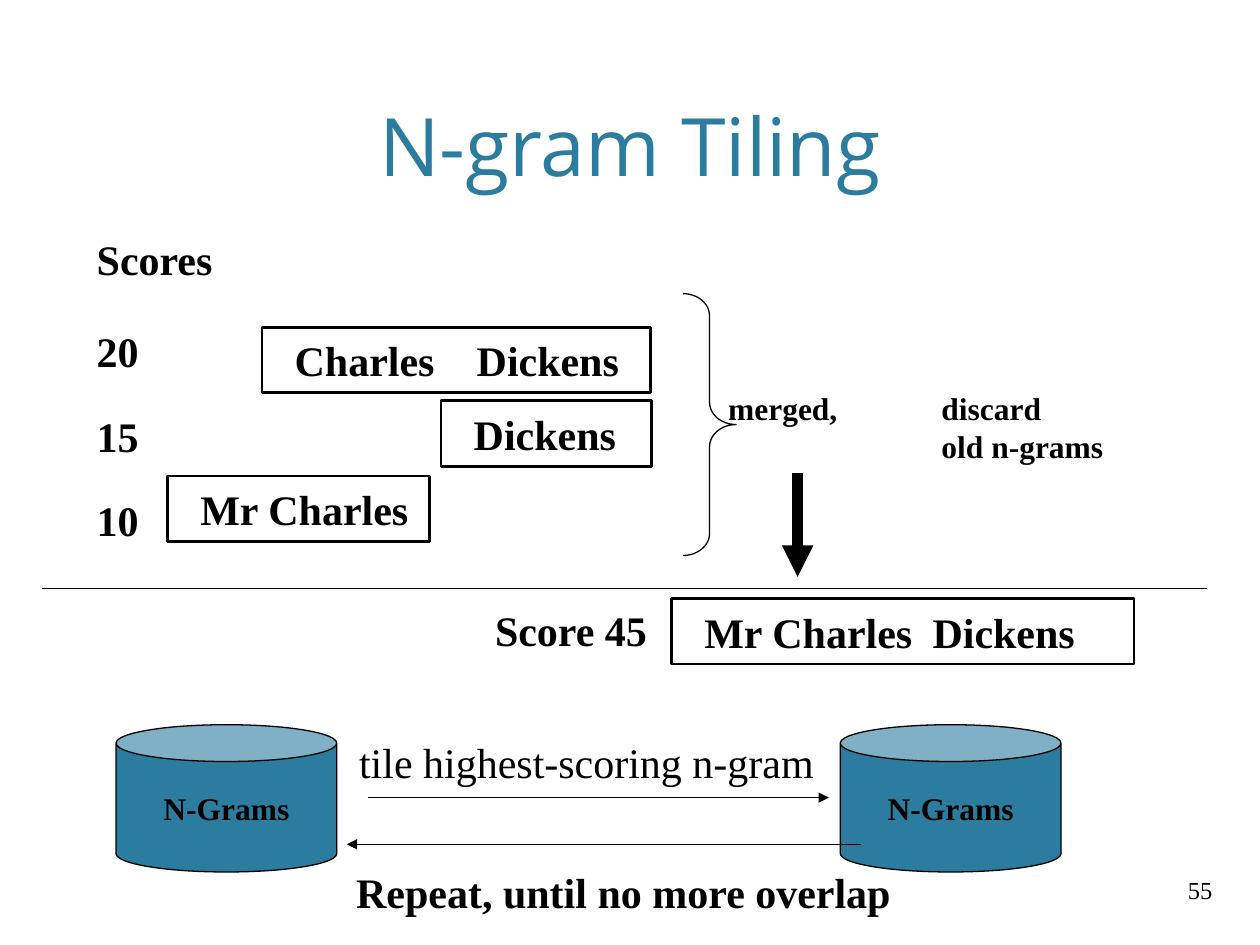
from dataclasses import dataclass
from typing import Optional

import pptx
import pptx.dml.color
import pptx.enum.shapes
import pptx.enum.text
import pptx.oxml
import pptx.oxml.ns
import pptx.util

Cm, Pt = pptx.util.Cm, pptx.util.Pt
SHAPE = pptx.enum.shapes.MSO_SHAPE
ALIGN = pptx.enum.text.PP_ALIGN
ANCHOR = pptx.enum.text.MSO_ANCHOR


@dataclass(frozen=True)
class Theme:
    teal: str = "2C7C9F"
    black: str = "000000"
    title_font: str = "Open Sans"
    body_font: str = "Times New Roman"
    title: float = 46
    body: float = 24
    label: float = 18
    number: float = 14
    thin: float = 0.75
    border: float = 1.5
    thick: float = 6


THEME = Theme()


@dataclass(frozen=True)
class Box:
    """A position and size in centimetres."""
    left: float
    top: float
    width: float
    height: float

    def lengths(self) -> tuple:
        return tuple(Cm(v) for v in (self.left, self.top, self.width, self.height))


@dataclass(frozen=True)
class Text:
    """Lines of text with one format; tab is a tab stop in centimetres."""
    lines: tuple
    size: float = THEME.body
    bold: bool = True
    font: str = THEME.body_font
    color: str = THEME.black
    align: ALIGN = ALIGN.LEFT
    anchor: ANCHOR = ANCHOR.TOP
    wrap: bool = False
    inset: Optional[float] = None
    tab: Optional[float] = None
    spacing: Optional[float] = None
    gaps: tuple = ()


@dataclass(frozen=True)
class Line:
    x1: float
    y1: float
    x2: float
    y2: float
    width: float = THEME.thin
    arrow: bool = True


def rgb(color: str) -> pptx.dml.color.RGBColor:
    return pptx.dml.color.RGBColor.from_string(color)


def add_xml(parent, tag: str, **attrs):
    child = parent.makeelement(pptx.oxml.ns.qn(tag), attrs)
    parent.append(child)
    return child


def write(s, text: Text) -> None:
    tf = s.text_frame
    frame_format = {"word_wrap": text.wrap, "vertical_anchor": text.anchor}
    if text.inset is not None:
        frame_format["margin_left"] = Cm(text.inset)
    for name, value in frame_format.items():
        setattr(tf, name, value)
    for i, line in enumerate(text.lines):
        p = tf.add_paragraph() if i else tf.paragraphs[0]
        p.alignment = text.align
        if text.spacing:
            p.line_spacing = text.spacing
        if text.gaps:
            p.space_before = Pt(text.gaps[i])
        if text.tab:
            tabs = add_xml(p._p.get_or_add_pPr(), "a:tabLst")
            add_xml(tabs, "a:tab", pos=str(int(Cm(text.tab))), algn="l")
        r = p.add_run()
        r.text = line
        run_format = {"size": Pt(text.size), "bold": text.bold, "name": text.font}
        for name, value in run_format.items():
            setattr(r.font, name, value)
        r.font.color.rgb = rgb(text.color)


def add_text(slide, box: Box, text: Text) -> None:
    write(slide.shapes.add_textbox(*box.lengths()), text)


def add_shape(slide, kind: SHAPE, box: Box, line_width: float,
              fill: Optional[str] = None, text: Optional[Text] = None,
              adjustments: tuple = ()) -> None:
    s = slide.shapes.add_shape(kind, *box.lengths())
    s.shadow.inherit = False
    for i, value in enumerate(adjustments):
        s.adjustments[i] = value
    if fill:
        s.fill.solid()
        s.fill.fore_color.rgb = rgb(fill)
    else:
        s.fill.background()
    s.line.color.rgb = rgb(THEME.black)
    s.line.width = Pt(line_width)
    if text:
        write(s, text)


def add_line(slide, line: Line) -> None:
    ends = (Cm(v) for v in (line.x1, line.y1, line.x2, line.y2))
    s = slide.shapes.add_connector(pptx.enum.shapes.MSO_CONNECTOR.STRAIGHT, *ends)
    s.line.color.rgb = rgb(THEME.black)
    s.line.width = Pt(line.width)
    if line.arrow:
        add_xml(s.line._get_or_add_ln(), "a:tailEnd", type="triangle")
    add_xml(s._element.spPr, "a:effectLst")


def ngram(line: str, tab: Optional[float] = None) -> Text:
    return Text((line,), anchor=ANCHOR.MIDDLE, inset=0.66, tab=tab)


NGRAM_HEIGHT = 1.32
NGRAMS = (
    (Box(8.89, 8.08, 4.24, NGRAM_HEIGHT), ngram("Dickens")),
    (Box(5.28, 6.6, 7.84, NGRAM_HEIGHT), ngram("Charles\tDickens", 3.67)),
    (Box(3.38, 9.6, 5.28, NGRAM_HEIGHT), ngram("Mr Charles")),
    (Box(13.54, 12.07, 9.32, NGRAM_HEIGHT), ngram("Mr Charles\tDickens", 4.6)),
)
TEXTS = (
    (Box(21.95, 17.42, 2.74, 1.02),
     Text(("55",), THEME.number, False, align=ALIGN.RIGHT,
          anchor=ANCHOR.MIDDLE, wrap=True)),
    (Box(1.52, 0.3, 22.35, 3.71),
     Text(("N-gram Tiling",), THEME.title, False, THEME.title_font, THEME.teal,
          ALIGN.CENTER, ANCHOR.BOTTOM, wrap=True)),
    (Box(1.7, 4.7, 2.87, 6.35),
     Text(("Scores", "20", "15", "10"), spacing=0.9, gaps=(0, 26.5, 22.5, 22.5))),
    (Box(14.68, 7.81, 8, 1.6),
     Text(("merged,\tdiscard", "\told n-grams"), THEME.label,
          anchor=ANCHOR.MIDDLE, wrap=True, inset=0, tab=4.3)),
    (Box(9.73, 12.07, 3.58, 1.27), Text(("Score 45",))),
    (Box(6.99, 14.73, 9.68, 1.27), Text(("tile highest-scoring n-gram",), bold=False)),
    (Box(6.93, 17.35, 11.3, 1.27), Text(("Repeat, until no more overlap",))),
)
LINES = (
    Line(16.08, 9.53, 16.08, 11.63, THEME.thick),
    Line(0.84, 11.86, 24.33, 11.86, arrow=False),
    Line(7.42, 16.08, 16.71, 16.08),
    Line(17.35, 17.02, 6.99, 17.02),
)
STORE_LEFTS = (2.34, 16.94)
STORE_LABEL = Text(("N-Grams",), THEME.label, align=ALIGN.CENTER, anchor=ANCHOR.MIDDLE)


def main() -> None:
    prs = pptx.Presentation()
    prs.slide_width, prs.slide_height = Cm(25.4), Cm(19.05)
    slide = prs.slides.add_slide(prs.slide_layouts[6])
    for box, text in NGRAMS:
        add_shape(slide, SHAPE.RECTANGLE, box, THEME.border, text=text)
    add_shape(slide, SHAPE.RIGHT_BRACE, Box(13.77, 5.92, 1.07, 5.28), THEME.thin,
              adjustments=(0.417, 0.5))
    for left in STORE_LEFTS:
        add_shape(slide, SHAPE.CAN, Box(left, 14.61, 4.45, 2.97), THEME.thin,
                  THEME.teal, STORE_LABEL, (0.25,))
    for box, text in TEXTS:
        add_text(slide, box, text)
    for line in LINES:
        add_line(slide, line)
    prs.save("out.pptx")


if __name__ == "__main__":
    main()
